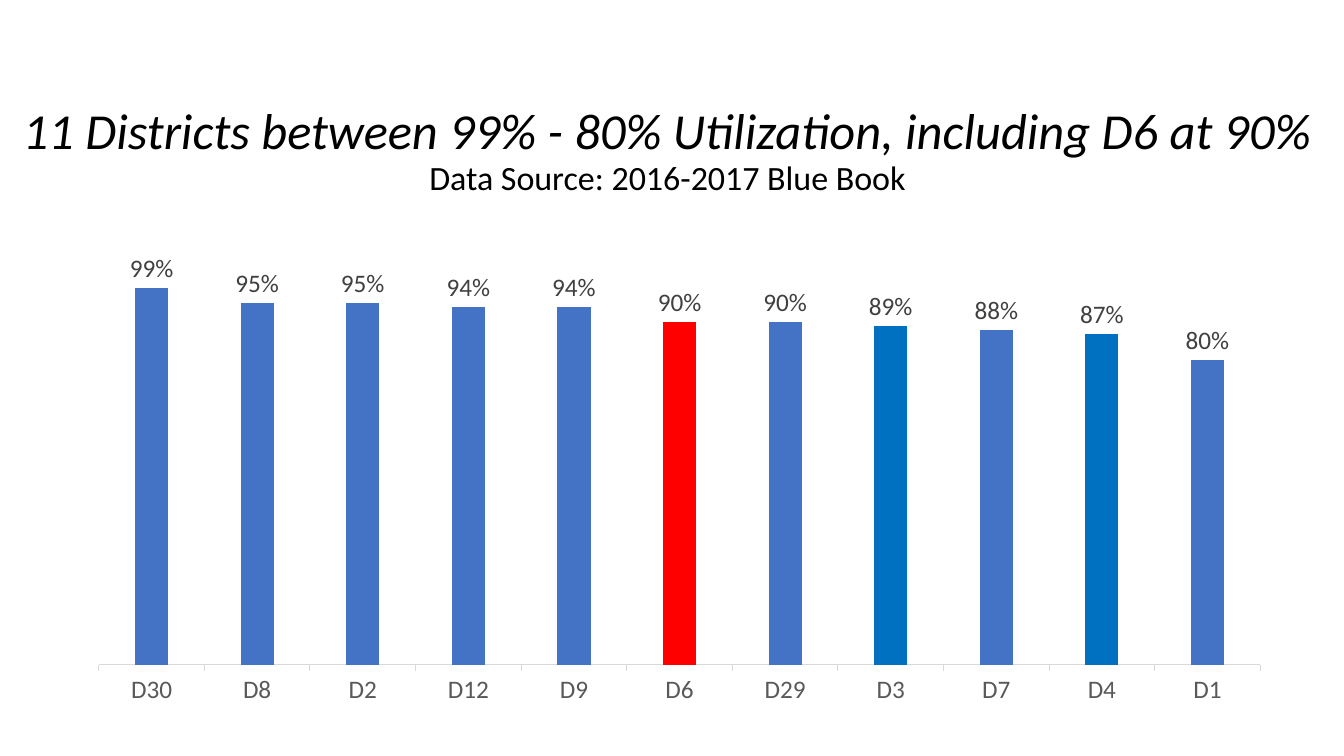
from pptx import Presentation
from pptx import util as u
from pptx.chart.data import CategoryChartData
from pptx.dml.color import RGBColor
from pptx.enum import chart as ch, text

WIDTH, HEIGHT = 13.33, 7.5
FONT = "Calibri"
COLORS = {"text": "000000", "bar": "4472C4", "district 6": "FF0000",
          "accent": "0070C0", "label": "404040", "category": "595959", "axis": "D9D9D9"}
HEADING = [
    ("11 Districts between 99% - 80% Utilization, including D6 at 90%", {"size": 36, "italic": True}),
    ("Data Source: 2016-2017 Blue Book", {"size": 24.3, "italic": False}),
]
UTILIZATION = {"D30": 0.99, "D8": 0.95, "D2": 0.95, "D12": 0.94, "D9": 0.94, "D6": 0.90,
               "D29": 0.90, "D3": 0.89, "D7": 0.88, "D4": 0.87, "D1": 0.80}
HIGHLIGHTS = {"D6": "district 6", "D3": "accent", "D4": "accent"}
HEADING_BOX = (0.06, 0.51, 13.12, 1.45)
CHART_BOX = (0.74, 1.96, 12, 5.14)


def rgb(name):
    return RGBColor.from_string(COLORS[name])


def set_values(target, values):
    for name, value in values.items():
        setattr(target, name, value)


def set_font(font, color, size, **values):
    set_values(font, {"name": FONT, "size": u.Pt(size), **values})
    font.color.rgb = rgb(color)


def set_fill(format_, color):
    format_.fill.solid()
    format_.fill.fore_color.rgb = rgb(color)


def add_heading(slide):
    frame = slide.shapes.add_textbox(*map(u.Inches, HEADING_BOX)).text_frame
    set_values(frame, {"word_wrap": True, "vertical_anchor": text.MSO_ANCHOR.BOTTOM,
                       "margin_bottom": 0})
    for index, (line, style) in enumerate(HEADING):
        paragraph = frame.add_paragraph() if index else frame.paragraphs[0]
        set_values(paragraph, {"alignment": text.PP_ALIGN.CENTER, "line_spacing": 0.9})
        run = paragraph.add_run()
        run.text = line
        set_font(run.font, "text", **style)


def add_utilization_chart(slide):
    data = CategoryChartData(number_format="0%")
    data.categories = list(UTILIZATION)
    data.add_series("Series 1", list(UTILIZATION.values()))
    chart = slide.shapes.add_chart(ch.XL_CHART_TYPE.COLUMN_CLUSTERED,
                                   *map(u.Inches, CHART_BOX), data).chart
    set_values(chart, {"has_legend": False, "has_title": False})
    set_font(chart.font, "text", 10)

    set_values(chart.value_axis, {"visible": False, "has_major_gridlines": False,
                                  "minimum_scale": 0, "maximum_scale": 1.2})
    axis = chart.category_axis
    set_values(axis, {"major_tick_mark": ch.XL_TICK_MARK.OUTSIDE,
                      "minor_tick_mark": ch.XL_TICK_MARK.NONE})
    set_font(axis.tick_labels.font, "category", 18)
    axis.format.line.width = u.Pt(0.75)
    axis.format.line.color.rgb = rgb("axis")

    plot = chart.plots[0]
    set_values(plot, {"gap_width": 219, "overlap": -27, "vary_by_categories": False,
                      "has_data_labels": True})
    set_values(plot.data_labels, {"show_value": True, "number_format": "0%",
                                  "number_format_is_linked": False,
                                  "position": ch.XL_LABEL_POSITION.OUTSIDE_END})
    set_font(plot.data_labels.font, "label", 18)

    series = plot.series[0]
    series.invert_if_negative = False
    set_fill(series.format, "bar")
    for index, district in enumerate(UTILIZATION):
        if district in HIGHLIGHTS:
            set_fill(series.points[index].format, HIGHLIGHTS[district])


def main():
    presentation = Presentation()
    set_values(presentation, {"slide_width": u.Inches(WIDTH), "slide_height": u.Inches(HEIGHT)})
    slide = presentation.slides.add_slide(presentation.slide_layouts[6])
    add_heading(slide)
    add_utilization_chart(slide)
    presentation.save("out.pptx")


if __name__ == "__main__":
    main()
